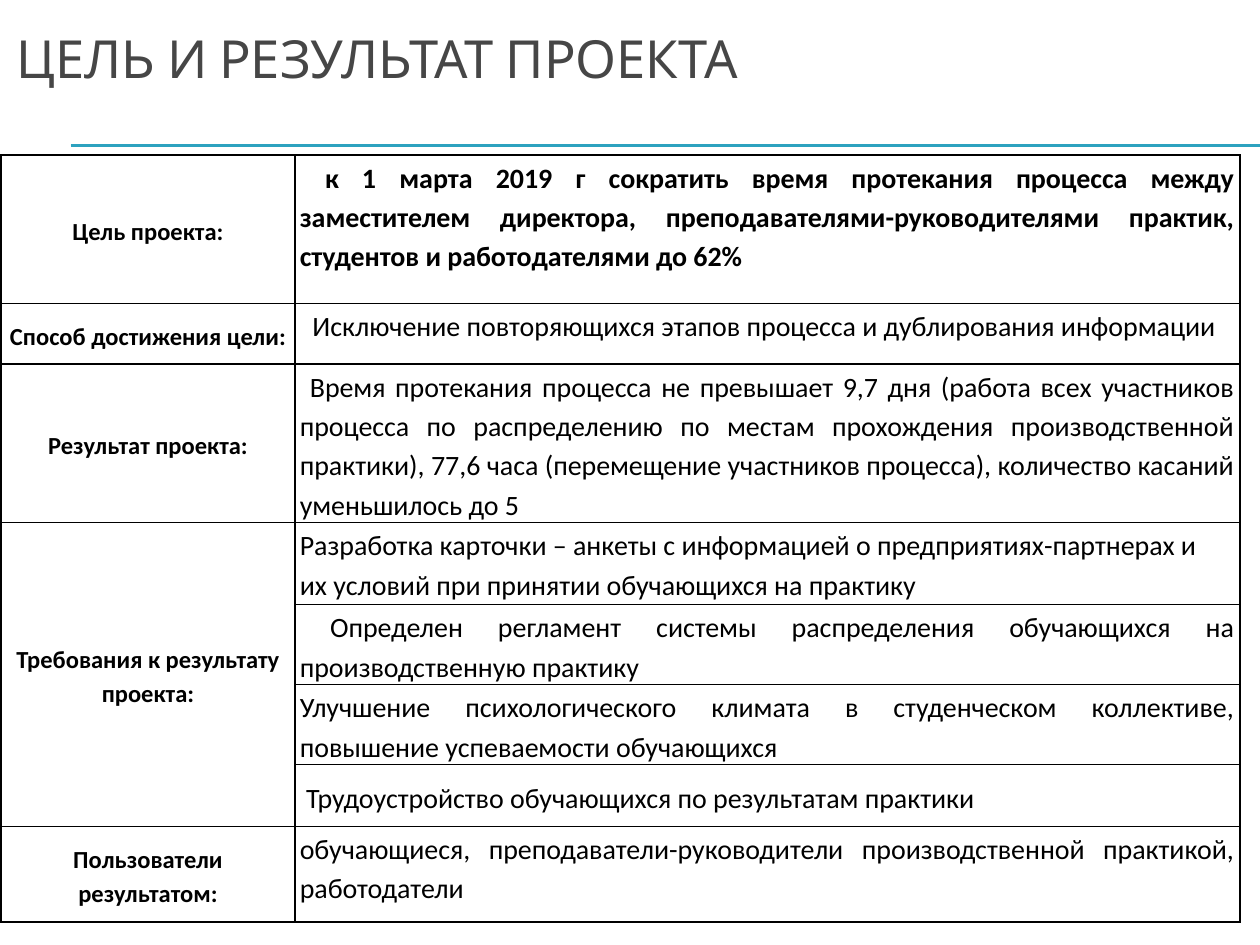
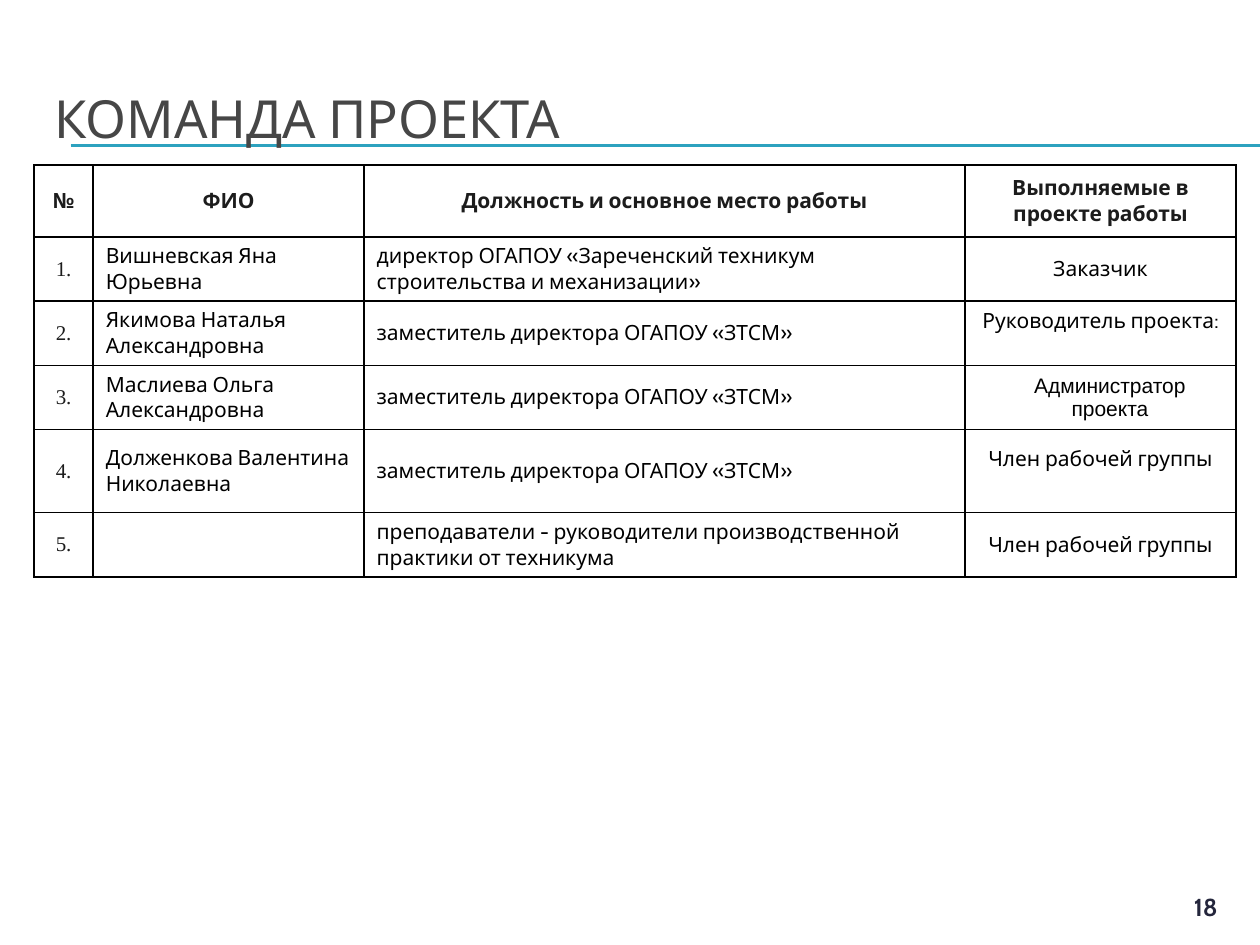
from dataclasses import dataclass

from lxml import etree
from pptx import Presentation
from pptx import util as u
from pptx.dml.color import RGBColor
from pptx.enum import shapes, text
from pptx.oxml import parse_xml
from pptx.oxml.ns import nsdecls, qn

Inches, Pt = u.Inches, u.Pt
LEFT, CENTER, JUSTIFY = (text.PP_ALIGN.LEFT, text.PP_ALIGN.CENTER,
                         text.PP_ALIGN.JUSTIFY)
TOP, MIDDLE = text.MSO_ANCHOR.TOP, text.MSO_ANCHOR.MIDDLE


@dataclass(frozen=True)
class Theme:
    title: RGBColor = RGBColor.from_string("464646")
    rule: RGBColor = RGBColor.from_string("2DA2BF")
    number: RGBColor = RGBColor.from_string("24263C")
    dark: RGBColor = RGBColor.from_string("1C1C1C")
    black: RGBColor = RGBColor.from_string("000000")
    white: RGBColor = RGBColor.from_string("FFFFFF")
    main_font: str = "Cabin"
    goal_font: str = "Calibri"
    title_size: int = 30
    goal_size: int = 16
    label_size: int = 14
    number_size: int = 14
    team_size: int = 12


T = Theme()


def add_grid(s, left, top, widths, heights):
    """Add an empty white table with thin black borders."""
    frame = s.shapes.add_table(len(heights), len(widths), Inches(left), Inches(top),
                               Inches(sum(widths)), Inches(sum(heights)))
    table = frame.table
    table.first_row = table.horz_banding = False
    for column, width in zip(table.columns, widths):
        column.width = Inches(width)
    for row, height in zip(table.rows, heights):
        row.height = Inches(height)
    for cell in table.iter_cells():
        cell.fill.solid()
        cell.fill.fore_color.rgb = T.white
    for tc_pr in frame.element.iter(qn("a:tcPr")):
        for i, side in enumerate("LRTB"):
            tc_pr.insert(i, parse_xml(
                f'<a:ln{side} {nsdecls("a")} w="12700"><a:solidFill>'
                f'<a:srgbClr val="{T.black}"/></a:solidFill></a:ln{side}>'))
    return table


def write(cell, words, font, size, insets, color=T.black, bold=False, align=LEFT,
          anchor=MIDDLE, spacing=None, margin=0, indent=0):
    """Put one formatted paragraph in a cell; insets are left, top, right, bottom."""
    (cell.margin_left, cell.margin_top,
     cell.margin_right, cell.margin_bottom) = map(Inches, insets)
    cell.vertical_anchor = anchor
    p = cell.text_frame.paragraphs[0]
    p.text = words
    p.alignment = align
    p.line_spacing = spacing
    p.font.name, p.font.size, p.font.bold = font, Pt(size), bold
    p.font.color.rgb = color
    p_pr = p._p.get_or_add_pPr()
    p_pr.set("marL", str(Inches(margin)))
    p_pr.set("indent", str(Inches(indent)))


prs = Presentation()
prs.slide_width, prs.slide_height = Inches(10), Inches(7.5)

# Title and double rule on both slides
slides = []
for heading, left, top in (("ЦЕЛЬ И РЕЗУЛЬТАТ ПРОЕКТА", 0.03, 0),
                           ("КОМАНДА ПРОЕКТА", 0.33, 0.47)):
    s = prs.slides.add_slide(prs.slide_layouts[5])
    title = s.shapes.title
    title.left, title.top = Inches(left), Inches(top)
    title.width, title.height = Inches(9.5), Inches(0.92)
    title.text_frame.vertical_anchor = MIDDLE
    p = title.text_frame.paragraphs[0]
    p.text = heading
    p.alignment = LEFT
    p.font.name, p.font.size = T.main_font, Pt(T.title_size)
    p.font.color.rgb = T.title
    for y in (1.15, 1.16):
        rule = s.shapes.add_connector(shapes.MSO_CONNECTOR.STRAIGHT,
                                      Inches(0.56), Inches(y), Inches(10), Inches(y))
        rule.line.color.rgb = T.rule
        rule.line.width = Pt(0.75)
        etree.SubElement(rule.element.spPr, qn("a:effectLst"))
        title.element.addprevious(rule.element)
    slides.append(s)
goal_slide, team_slide = slides

# Goal and result: height, label, words, first-line indent, alignment, anchor
goals = [
    (1.18, "Цель проекта:",
     "к 1 марта 2019 г сократить время протекания процесса между заместителем "
     "директора, преподавателями-руководителями практик, студентов и "
     "работодателями до 62%", 0.2, JUSTIFY, TOP),
    (0.48, "Способ достижения цели:",
     "Исключение повторяющихся этапов процесса и дублирования информации",
     0.1, JUSTIFY, TOP),
    (1.25, "Результат проекта:",
     "Время протекания процесса не превышает 9,7 дня (работа всех участников "
     "процесса по распределению по местам прохождения производственной практики), "
     "77,6 часа (перемещение участников процесса), количество касаний "
     "уменьшилось до 5", 0.08, JUSTIFY, MIDDLE),
    (0.65, "Требования к результату проекта:",
     "Разработка карточки – анкеты с информацией о предприятиях-партнерах и их "
     "условий при принятии обучающихся на практику", 0, LEFT, TOP),
    (0.63, None,
     "Определен регламент системы распределения обучающихся на производственную "
     "практику", 0.24, JUSTIFY, MIDDLE),
    (0.63, None,
     "Улучшение психологического климата в студенческом коллективе, повышение "
     "успеваемости обучающихся", 0, JUSTIFY, MIDDLE),
    (0.49, None, "Трудоустройство обучающихся по результатам практики",
     0.05, JUSTIFY, MIDDLE),
    (0.76, "Пользователи результатом:",
     "обучающиеся, преподаватели-руководители производственной практикой, "
     "работодатели", 0, JUSTIFY, TOP),
]
table = add_grid(goal_slide, 0.01, 1.23, [2.33, 7.5], [goal[0] for goal in goals])
table.cell(3, 0).merge(table.cell(6, 0))
tight = (0.04, 0.01, 0.04, 0)
for i, (_, label, words, indent, align, anchor) in enumerate(goals):
    if label:
        write(table.cell(i, 0), label, T.goal_font, T.label_size, tight,
              bold=True, align=CENTER, spacing=1.15)
    insets = (0.04, 0.01, 0.2, 0) if align == LEFT else tight
    write(table.cell(i, 1), words, T.goal_font, T.goal_size, insets, bold=i == 0,
          align=align, anchor=anchor, spacing=1.15, indent=indent)

# Team: height, name, post, role, role options
deputy = "заместитель директора ОГАПОУ «ЗТСМ»"
member = "Член рабочей группы"
roomy, narrow, raised = (0.1, 0.05, 0.1, 0.05), (0.07, 0, 0.07, 0), (0.07, 0, 0.07, 0.2)
team = [
    (0.51, "Вишневская Яна Юрьевна",
     "директор ОГАПОУ «Зареченский техникум строительства и механизации»",
     "Заказчик", dict(insets=narrow)),
    (0.51, "Якимова Наталья Александровна", deputy, "Руководитель проекта:",
     dict(insets=raised)),
    (0.51, "Маслиева Ольга Александровна", deputy, "Администратор проекта",
     dict(insets=roomy, font="Arial", margin=0.15)),
    (0.66, "Долженкова Валентина Николаевна", deputy, member, dict(insets=raised)),
    (0.51, "", "преподаватели - руководители производственной практики от техникума",
     member, dict(insets=roomy)),
]
table = add_grid(team_slide, 0.27, 1.31, [0.47, 2.15, 4.77, 2.15],
                 [0.57] + [person[0] for person in team])
headers = ["№", "ФИО", "Должность и основное место работы",
           "Выполняемые в проекте работы"]
for j, header in enumerate(headers):
    write(table.cell(0, j), header, T.main_font, T.team_size, roomy,
          color=T.dark, bold=True, align=CENTER)
for i, (_, name, post, role, options) in enumerate(team, 1):
    write(table.cell(i, 0), f"{i}.", "Times New Roman", T.team_size, roomy,
          color=T.dark, align=CENTER)
    for j, words in enumerate((name, post), 1):
        if words:
            write(table.cell(i, j), words, T.main_font, T.team_size, roomy)
    write(table.cell(i, 3), role, size=T.team_size, align=CENTER,
          **{"font": T.main_font, **options})

sp = team_slide.shapes.add_textbox(Inches(9.3), Inches(7.03), Inches(0.54), Inches(0.31))
sp.text_frame.word_wrap = True
p = sp.text_frame.paragraphs[0]
p.text = "18"
p.alignment = CENTER
p.font.name, p.font.size, p.font.bold = T.main_font, Pt(T.number_size), True
p.font.color.rgb = T.number

prs.save("out.pptx")
